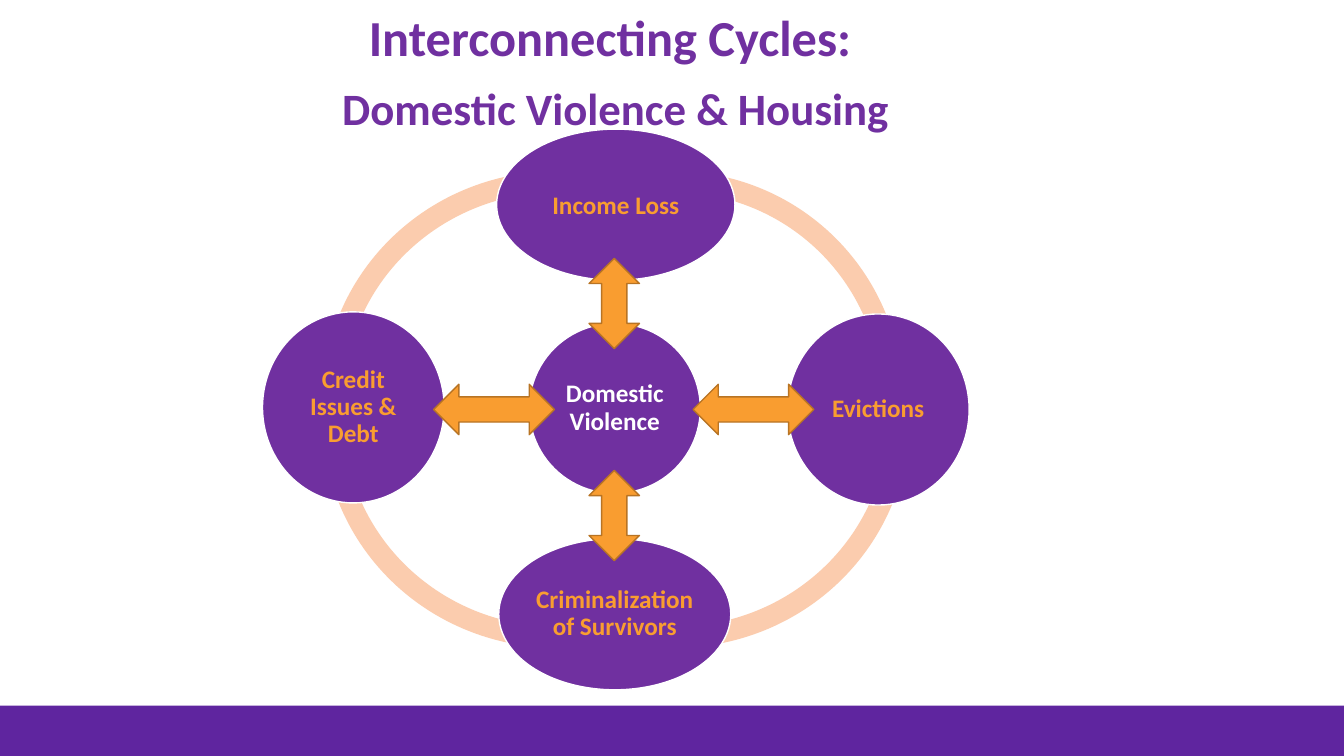
from typing import NamedTuple

from pptx import Presentation
from pptx.dml.color import RGBColor
from pptx.enum.shapes import MSO_SHAPE as Preset
from pptx.enum.text import MSO_ANCHOR as Anchor, PP_ALIGN as Align
from pptx.util import Emu, Pt

PX = 9525  # EMU per px, 96 px to the inch
FONT = "Calibri"
COLORS = {
    "band": "5F259F",
    "purple": "7030A0",
    "orange": "F99D30",
    "arrow_edge": "B87424",
    "peach": "FBCCAE",
    "white": "FFFFFF",
}


class Box(NamedTuple):
    left: int
    top: int
    width: int
    height: int


class RingArc(NamedTuple):
    box: Box
    start: float  # degrees, clockwise from the right
    end: float


class Bubble(NamedTuple):
    text: str
    box: Box
    color: str = "orange"
    line_spacing: float = 0.9


class Arrow(NamedTuple):
    box: Box
    rotation: int = 0


ARCS = [
    RingArc(Box(307, 163, 447, 437), 178.08, 286.45),
    RingArc(Box(307, 180, 447, 437), 73.52, 182.78),
    RingArc(Box(419, 180, 447, 437), 357.6, 106.65),
    RingArc(Box(423, 163, 437, 437), 253.35, 2.4),
]
RING_THICKNESS = 0.046

BUBBLES = [
    Bubble("Domestic Violence", Box(504, 308, 163, 162), color="white"),
    Bubble("Income Loss", Box(473, 123, 227, 144), line_spacing=1.0),
    Bubble("Evictions", Box(750, 299, 173, 182)),
    Bubble("Criminalization of Survivors", Box(475, 513, 221, 144)),
    Bubble("Credit Issues & Debt", Box(250, 297, 173, 182)),
]

ARROWS = [
    Arrow(Box(660, 366, 115, 48)),
    Arrow(Box(542, 265, 86, 48), rotation=90),
    Arrow(Box(413, 366, 115, 48)),
    Arrow(Box(542, 467, 86, 48), rotation=90),
]


def px(value: float) -> Emu:
    return Emu(round(value * PX))


def rgb(name: str) -> RGBColor:
    return RGBColor.from_string(COLORS[name])


def add_preset(slide, preset, box: Box, fill: str, line: str | None = None):
    shape = slide.shapes.add_shape(preset, *map(px, box))
    shape.shadow.inherit = False
    shape.fill.solid()
    shape.fill.fore_color.rgb = rgb(fill)
    if line:
        shape.line.color.rgb = rgb(line)
        shape.line.width = Pt(1)
    else:
        shape.line.fill.background()
    return shape


def write(paragraph, text: str, *, size: int, color: str,
          line_spacing: float = 1.0, space_before: int = 0) -> None:
    paragraph.alignment = Align.CENTER
    paragraph.line_spacing = line_spacing
    paragraph.space_before = Pt(space_before)
    run = paragraph.add_run()
    run.text = text
    run.font.name = FONT
    run.font.size = Pt(size)
    run.font.bold = True
    run.font.color.rgb = rgb(color)


def add_title(slide) -> None:
    frame = slide.shapes.add_textbox(*map(px, Box(224, 1, 725, 132))).text_frame
    frame.word_wrap = True
    write(frame.paragraphs[0], "Interconnecting Cycles: ", size=36, color="purple")
    write(frame.add_paragraph(), "Domestic Violence & Housing", size=32,
          color="purple", space_before=10)


def add_arc(slide, arc: RingArc) -> None:
    shape = add_preset(slide, Preset.BLOCK_ARC, arc.box, "peach")
    # Angles are stored in 60000ths of a degree, adjustments in 100000ths
    shape.adjustments[0] = arc.start * 0.6
    shape.adjustments[1] = arc.end * 0.6
    shape.adjustments[2] = RING_THICKNESS


def add_bubble(slide, bubble: Bubble) -> None:
    shape = add_preset(slide, Preset.OVAL, bubble.box, "purple", "white")
    frame = shape.text_frame
    frame.word_wrap = True
    frame.vertical_anchor = Anchor.MIDDLE
    frame.margin_left = frame.margin_right = px(3)
    frame.margin_top = frame.margin_bottom = px(3)
    write(frame.paragraphs[0], bubble.text, size=18, color=bubble.color,
          line_spacing=bubble.line_spacing)


def add_arrow(slide, arrow: Arrow) -> None:
    shape = add_preset(slide, Preset.LEFT_RIGHT_ARROW, arrow.box, "orange", "arrow_edge")
    shape.rotation = arrow.rotation


def main() -> None:
    presentation = Presentation()
    presentation.slide_width, presentation.slide_height = px(1280), px(720)
    slide = presentation.slides.add_slide(presentation.slide_layouts[6])

    # Footer band and title
    add_preset(slide, Preset.RECTANGLE, Box(0, 672, 1280, 48), "band")
    add_title(slide)

    # Cycle: ring, bubbles, then arrows on top
    for arc in ARCS:
        add_arc(slide, arc)
    for bubble in BUBBLES:
        add_bubble(slide, bubble)
    for arrow in ARROWS:
        add_arrow(slide, arrow)

    presentation.save("out.pptx")


if __name__ == "__main__":
    main()
